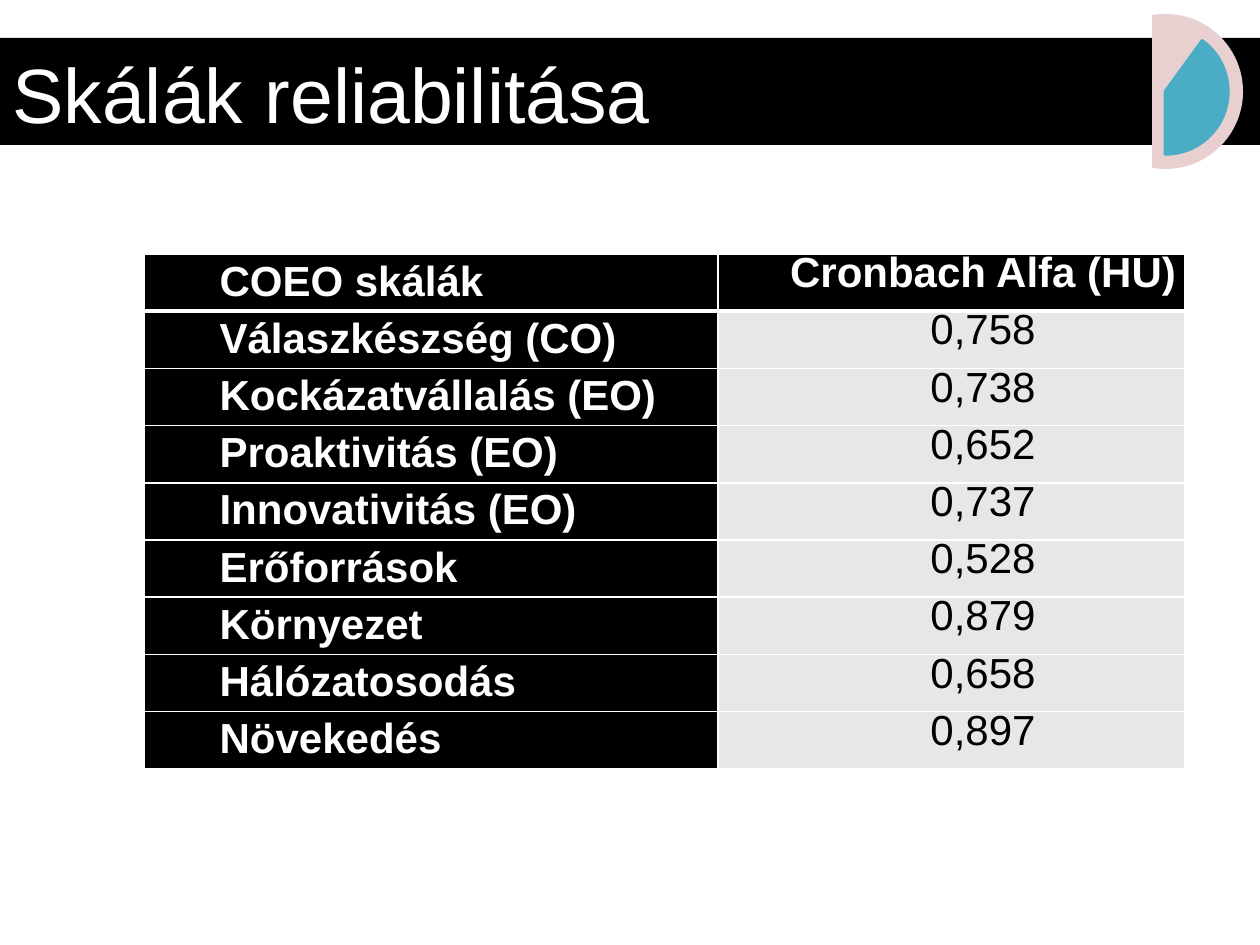
from dataclasses import dataclass

from lxml import etree
from pptx import Presentation
from pptx import util as u
from pptx.dml.color import RGBColor
from pptx.enum import shapes, text
from pptx.oxml.ns import qn

DPI = 126
FONT = "Arial"
BLACK, WHITE, GREY = "000000", "FFFFFF", "E7E7E7"
ROSE, TEAL = "E8D0D0", "4BACC6"
HEAD = ("COEO skálák", "Cronbach Alfa (HU)")
SCALES = [
    ("Válaszkészség (CO)", "0,758"),
    ("Kockázatvállalás (EO)", "0,738"),
    ("Proaktivitás (EO)", "0,652"),
    ("Innovativitás (EO)", "0,737"),
    ("Erőforrások", "0,528"),
    ("Környezet", "0,879"),
    ("Hálózatosodás", "0,658"),
    ("Növekedés", "0,897"),
]


@dataclass
class Arc:
    """A round shape cut between two angles, in degrees clockwise from east."""
    kind: shapes.MSO_SHAPE
    left: int
    top: int
    size: int
    start: int
    end: int
    color: str
    line: int = 0


ARCS = [
    Arc(shapes.MSO_SHAPE.CHORD, 1088, 14, 155, 260, 100, ROSE),
    Arc(shapes.MSO_SHAPE.PIE, 1103, 29, 125, 306, 90, TEAL, 2),
]


def px(n: int) -> int:
    return u.Inches(n / DPI)


def paint(fill, color: str) -> None:
    fill.solid()
    fill.fore_color.rgb = RGBColor.from_string(color)


def write(par, words: str, size: int, color: str, bold: bool = False) -> None:
    run = par.add_run()
    run.text = words
    font = run.font
    font.name, font.size, font.bold = FONT, u.Pt(size), bold
    font.color.rgb = RGBColor.from_string(color)


def add_shape(tree, kind, box: tuple, color: str, line: int = 0):
    shape = tree.add_shape(kind, *map(px, box))
    shape.shadow.inherit = False
    paint(shape.fill, color)
    if line:
        paint(shape.line.fill, color)
        shape.line.width = u.Pt(line)
    else:
        shape.line.fill.background()
    return shape


def add_arc(tree, arc: Arc) -> None:
    box = (arc.left, arc.top, arc.size, arc.size)
    shape = add_shape(tree, arc.kind, box, arc.color, arc.line)
    for i, angle in enumerate((arc.start, arc.end)):
        # Angles are stored in 60000ths of a degree, adjustments in 100000ths.
        shape.adjustments[i] = angle * 0.6


def add_edges(cell, top: int, bottom: int) -> None:
    """Put white borders, in points, ahead of the cell's fill."""
    props = cell._tc.get_or_add_tcPr()
    widths = {"L": 1, "R": 1, "T": top, "B": bottom}
    for i, (side, width) in enumerate(widths.items()):
        edge = etree.Element(qn(f"a:ln{side}"), w=str(u.Pt(width)))
        fill = etree.SubElement(edge, qn("a:solidFill"))
        etree.SubElement(fill, qn("a:srgbClr"), val=WHITE)
        props.insert(i, edge)


def fill_cell(cell, words: str, row: int, col: int) -> None:
    dark = row == 0 or col == 0
    paint(cell.fill, BLACK if dark else GREY)
    add_edges(cell, 3 if row == 1 else 1, 3 if row == 0 else 1)
    par = cell.text_frame.paragraphs[0]
    par.line_spacing = u.Pt(16)
    par._p.get_or_add_pPr().set("indent", str(u.Inches(0.5)))
    if col == 0:
        cell.vertical_anchor = text.MSO_ANCHOR.BOTTOM
    else:
        cell.vertical_anchor = text.MSO_ANCHOR.MIDDLE
        cell.margin_left = cell.margin_right = 0
        cell.margin_top = cell.margin_bottom = 0
        par.alignment = text.PP_ALIGN.CENTER
    write(par, words, 24, WHITE if dark else BLACK, dark)


def add_scales(tree) -> None:
    rows = [HEAD, *SCALES]
    widths = (574, 467)
    box = (144, 254, sum(widths), 515)
    table = tree.add_table(len(rows), len(widths), *map(px, box)).table
    table.first_row = table.horz_banding = False
    for col, width in zip(table.columns, widths):
        col.width = px(width)
    for r, row in enumerate(rows):
        table.rows[r].height = px(box[3]) // len(rows)
        for c, words in enumerate(row):
            fill_cell(table.cell(r, c), words, r, c)


def add_title(tree) -> None:
    bar = add_shape(tree, shapes.MSO_SHAPE.RECTANGLE, (0, 38, 1260, 107), BLACK)
    frame = bar.text_frame
    frame.word_wrap = True
    frame.vertical_anchor = text.MSO_ANCHOR.BOTTOM
    par = frame.paragraphs[0]
    par.alignment = text.PP_ALIGN.LEFT
    write(par, "Skálák reliabilitása", 44, WHITE)


def main() -> None:
    deck = Presentation()
    deck.slide_width, deck.slide_height = px(1260), px(945)
    tree = deck.slides.add_slide(deck.slide_layouts[6]).shapes
    add_scales(tree)
    add_title(tree)
    badge = tree.add_group_shape().shapes
    for arc in ARCS:
        add_arc(badge, arc)
    deck.save("out.pptx")


if __name__ == "__main__":
    main()
